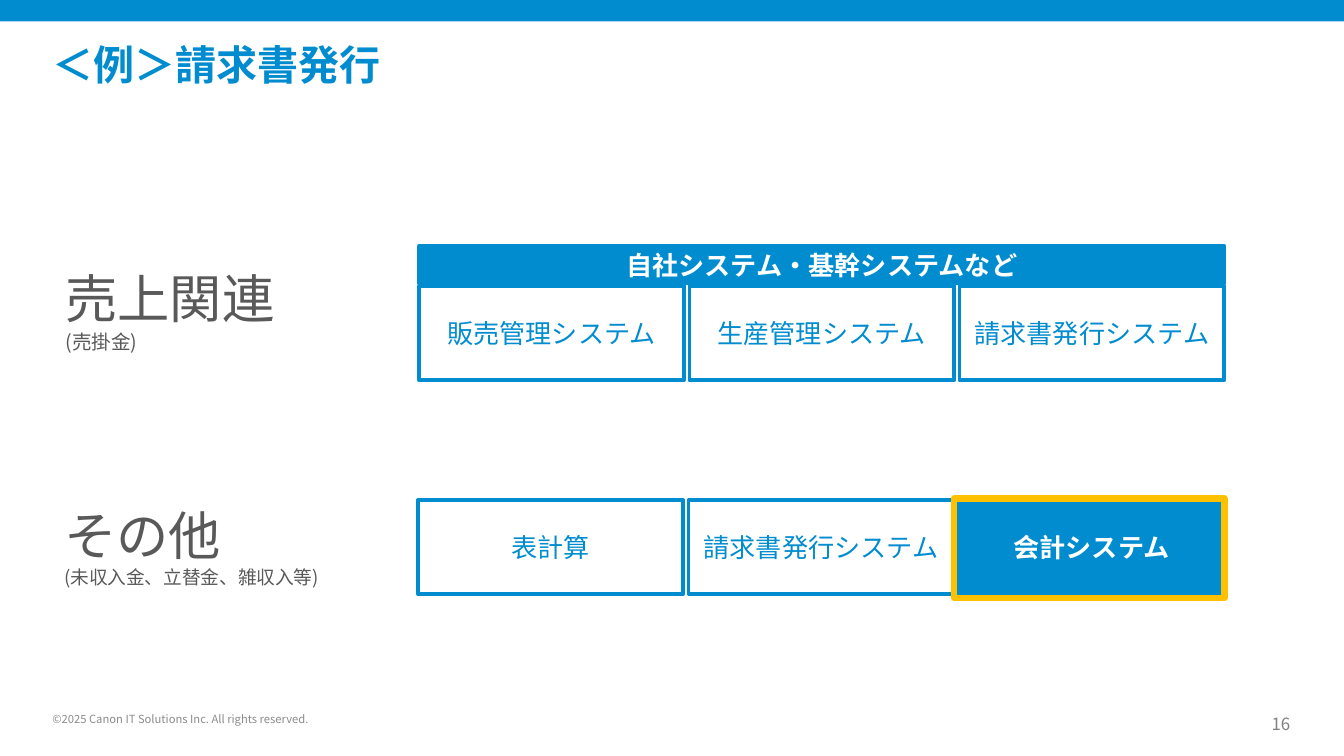
from dataclasses import dataclass

from lxml import etree
from pptx import Presentation
from pptx import util as u
from pptx.dml.color import RGBColor
from pptx.enum import shapes, text
from pptx.oxml import ns


@dataclass(frozen=True)
class Theme:
    """Colours, type sizes and line widths of the deck."""
    font: str = "Noto Sans CJK JP"
    blue: str = "008CCF"
    white: str = "FFFFFF"
    gold: str = "FFC000"
    body: str = "595959"
    number: str = "808080"
    notice: str = "8C8C8C"
    title_size: float = 22
    heading_size: float = 28
    system_size: float = 14
    number_size: float = 9
    notice_size: float = 6
    border: float = 2
    highlight: float = 3.5
    category_spacing: float = 0.97


@dataclass(frozen=True)
class Box:
    """An area measured in grid cells of a tenth of an inch."""
    left: float
    top: float
    width: float
    height: float

    def emu(self):
        """Return the area as four slide lengths."""
        return [u.Inches(cells / 10) for cells in (self.left, self.top, self.width, self.height)]

    def column(self, index, count, gap):
        """Return one of several equal columns."""
        width = (self.width - gap * (count - 1)) / count
        return Box(self.left + index * (width + gap), self.top, width, self.height)


THEME = Theme()
SLIDE = Box(0, 0, 100, 100 * 9 / 16)
COLUMN_GAP = 0.4
ALIGN = text.PP_ALIGN
ANCHOR = text.MSO_ANCHOR


def style(paragraph, size, color, bold=False, align=ALIGN.LEFT):
    """Format a paragraph for Latin and Japanese text alike."""
    paragraph.alignment = align
    font = paragraph.font
    font.size, font.bold, font.name = u.Pt(size), bold, THEME.font
    font.color.rgb = RGBColor.from_string(color)
    defaults = paragraph._p.pPr.find(ns.qn("a:defRPr"))
    etree.SubElement(defaults, ns.qn("a:ea"), typeface=THEME.font)


def trim(frame, anchor):
    """Remove the insets of a frame and anchor its text."""
    frame.margin_left = frame.margin_right = frame.margin_top = frame.margin_bottom = 0
    frame.vertical_anchor = anchor
    frame.word_wrap = True
    frame.auto_size = text.MSO_AUTO_SIZE.NONE


def add_panel(slide, box, fill=None, line=None, width=THEME.border):
    """Draw a plain rectangle with an optional fill and border."""
    panel = slide.shapes.add_shape(shapes.MSO_SHAPE.RECTANGLE, *box.emu())
    panel.shadow.inherit = False
    if fill:
        panel.fill.solid()
        panel.fill.fore_color.rgb = RGBColor.from_string(fill)
    else:
        panel.fill.background()
    if line:
        panel.line.color.rgb = RGBColor.from_string(line)
        panel.line.width = u.Pt(width)
    else:
        panel.line.fill.background()
    return panel


def add_system(slide, box, name, filled=False):
    """Draw one system as a labelled rectangle."""
    fill, color = (THEME.blue, THEME.white) if filled else (THEME.white, THEME.blue)
    frame = add_panel(slide, box, fill, THEME.blue).text_frame
    frame.text = name
    frame.word_wrap = True
    frame.vertical_anchor = ANCHOR.MIDDLE
    style(frame.paragraphs[0], THEME.system_size, color, filled, ALIGN.CENTER)


def add_systems(slide, box, names, chosen=None):
    """Lay out a row of systems in equal columns."""
    for index, name in enumerate(names):
        cell = box.column(index, len(names), COLUMN_GAP)
        add_system(slide, cell, name, name == chosen)


def add_category(slide, box, heading, detail, detail_size):
    """Write a category heading with its detail below."""
    frame = slide.shapes.add_textbox(*box.emu()).text_frame
    frame.word_wrap = True
    frame.text = f"{heading}\n{detail}"
    for paragraph, size in zip(frame.paragraphs, (THEME.heading_size, detail_size)):
        paragraph.line_spacing = THEME.category_spacing
        style(paragraph, size, THEME.body)


def add_header(slide, box, title):
    """Draw the top band and fill the title placeholder."""
    add_panel(slide, Box(box.left, box.top, box.width, 1.6), THEME.blue)
    heading = slide.shapes.title
    heading.left, heading.top, heading.width, heading.height = Box(
        box.left + 3.9, box.top + 2.9, 77.6, 6.4
    ).emu()
    heading.text_frame.text = title
    trim(heading.text_frame, ANCHOR.TOP)
    style(heading.text_frame.paragraphs[0], THEME.title_size, THEME.blue, True)


def add_small_print(slide, box, words, size, color, align):
    """Write one line of the footer."""
    frame = slide.shapes.add_textbox(*box.emu()).text_frame
    frame.text = words
    trim(frame, ANCHOR.BOTTOM)
    style(frame.paragraphs[0], size, color, align=align)


def add_footer(slide, box, notice, number):
    """Write the copyright line and the page number."""
    add_small_print(slide, Box(box.left + 3.9, box.top, 23.6, 1.5), notice,
                    THEME.notice_size, THEME.notice, ALIGN.LEFT)
    add_small_print(slide, Box(box.left + 92.1, box.top + 0.6, 3.9, 1.5), number,
                    THEME.number_size, THEME.number, ALIGN.RIGHT)


def add_sales(slide, box):
    """Build the sales row with a heading over its systems."""
    add_category(slide, Box(box.left, box.top + 1.3, 19.7, 7.7), "売上関連", "(売掛金)", 10.5)
    systems = Box(box.left + 27.3, box.top + 3, 59.9, 7)
    add_systems(slide, systems, ["販売管理システム", "生産管理システム", "請求書発行システム"])
    add_system(slide, Box(systems.left, box.top, systems.width, 2.8),
               "自社システム・基幹システムなど", True)


def add_others(slide, box):
    """Build the row of other receivables and frame the chosen system."""
    add_category(slide, Box(box.left - 0.1, box.top, 33.9, 7.4),
                 "その他", "(未収入金、立替金、雑収入等)", 10)
    systems = Box(box.left + 27.2, box.top, 60, 7)
    add_systems(slide, systems, ["表計算", "請求書発行システム", "会計システム"], "会計システム")
    add_panel(slide, Box(box.left + 67.1, box.top - 0.1, 20.1, 7.4),
              line=THEME.gold, width=THEME.highlight)


def main():
    """Assemble and save the slide."""
    deck = Presentation()
    _, _, deck.slide_width, deck.slide_height = SLIDE.emu()
    slide = deck.slides.add_slide(deck.slide_layouts[5])
    add_header(slide, Box(0, 0, SLIDE.width, 9.3), "＜例＞請求書発行")
    add_sales(slide, Box(3.9, 18.3, 87.2, 10))
    add_others(slide, Box(3.9, 37.2, 87.2, 7.4))
    add_footer(slide, Box(0, 52.5, SLIDE.width, 2.1),
               "©2025 Canon IT Solutions Inc. All rights reserved.", "16")
    deck.save("out.pptx")


if __name__ == "__main__":
    main()
